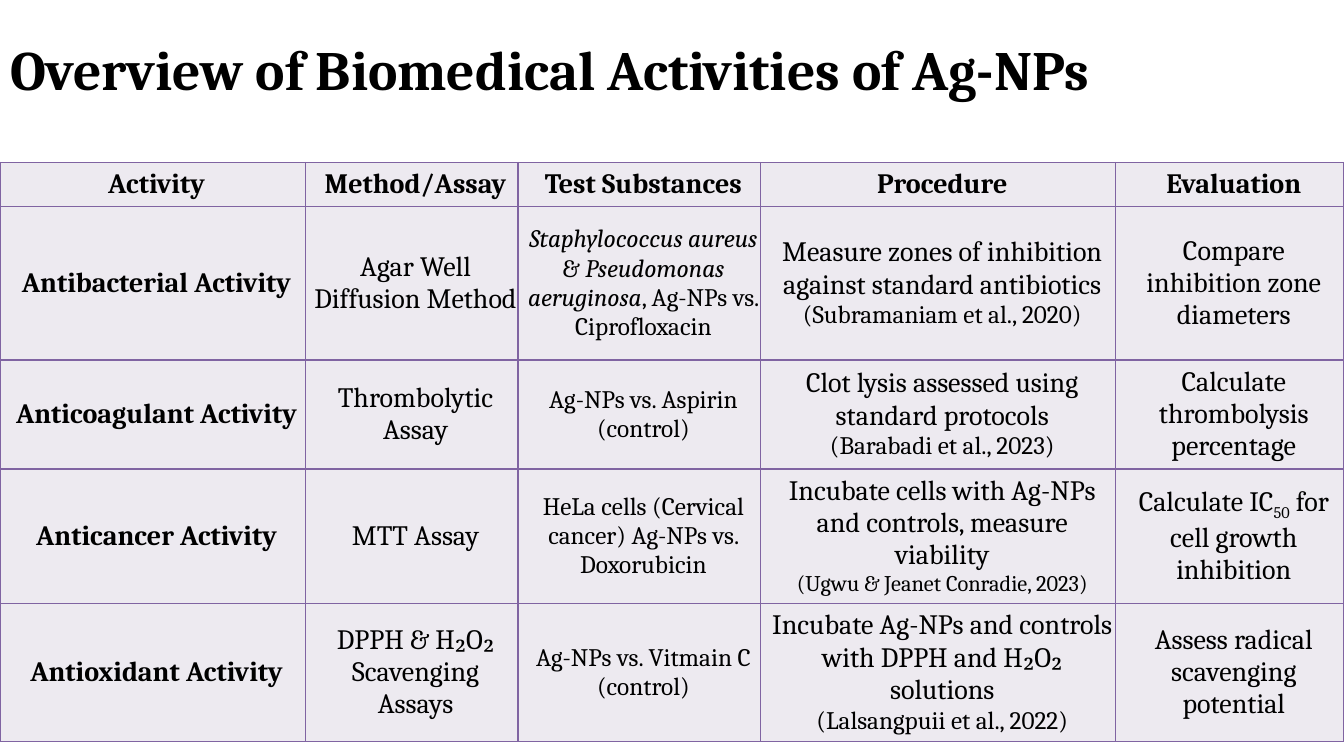
from lxml.etree import SubElement
from pptx import Presentation
from pptx.dml.color import RGBColor
from pptx.enum.text import MSO_ANCHOR, PP_ALIGN
from pptx.oxml.ns import qn
from pptx.util import Pt

TITLE = "Overview of Biomedical Activities of Ag-NPs"
HEADS = ["Activity", "Method/Assay", "Test Substances", "Procedure", "Evaluation"]
SUB = {"base": -25000}
ITAL = {"italic": True}
CITE = {"size": 18}
SMALL = {"size": 16}

# A cell is a plain string or a list of paragraphs, each a list of (text, format) runs.
ROWS = [
    ["Antibacterial Activity", "Agar Well Diffusion Method",
     [[("Staphylococcus aureus ", ITAL), ("& ", {}),
       ("Pseudomonas aeruginosa", ITAL), (", Ag-NPs vs. Ciprofloxacin", {})]],
     [[("Measure zones of inhibition against standard antibiotics", {})],
      [("(Subramaniam et al., 2020)", CITE)]],
     "Compare inhibition zone diameters"],
    ["Anticoagulant Activity", "Thrombolytic Assay", "Ag-NPs vs. Aspirin (control)",
     [[("Clot lysis assessed using standard protocols", {})],
      [("(Barabadi et al., 2023)", CITE)]],
     "Calculate thrombolysis percentage"],
    ["Anticancer Activity", "MTT Assay",
     "HeLa cells (Cervical cancer) Ag-NPs vs. Doxorubicin",
     [[("Incubate cells with Ag-NPs and controls, measure viability", {})],
      [("(Ugwu & Jeanet Conradie, 2023)", SMALL)]],
     [[("Calculate IC", {}), ("50", SUB), (" for cell growth inhibition", {})]]],
    ["Antioxidant Activity", "DPPH & H₂O₂ Scavenging Assays",
     "Ag-NPs vs. Vitmain C (control)",
     [[("Incubate Ag-NPs and controls with DPPH and H₂O₂ solutions", {})],
      [("(Lalsangpuii et al., 2022)", CITE)]],
     "Assess radical scavenging potential"],
]

COLORS = {"text": "000000", "fill": "EDEAF0", "line": "8064A2"}
FONT = "Cambria"
WIDE, HIGH = 960, 540
WIDTHS = [218, 152, 173.5, 253.5, 163]
HEIGHTS = [31, 109.5, 76, 94.5, 96.5]
TOP = 116


def write(para, text, size=20, bold=False, italic=False, base=0):
    run = para.add_run()
    run.text = text
    font = run.font
    font.name, font.size = FONT, Pt(size)
    font.bold, font.italic = bold, italic
    font.color.rgb = RGBColor.from_string(COLORS["text"])
    if base:
        run._r.get_or_add_rPr().set("baseline", str(base))


def border(cell):
    props = cell._tc.get_or_add_tcPr()
    for spot, side in enumerate(("a:lnL", "a:lnR", "a:lnT", "a:lnB")):
        line = props.makeelement(qn(side), {"w": str(Pt(1))})
        props.insert(spot, line)
        paint = SubElement(line, qn("a:solidFill"))
        SubElement(paint, qn("a:srgbClr"), val=COLORS["line"])


def fill_cell(cell, body, **style):
    cell.vertical_anchor = MSO_ANCHOR.MIDDLE
    cell.margin_left, cell.margin_right = Pt(5.76), Pt(0)
    cell.margin_top = cell.margin_bottom = Pt(4.32)
    cell.fill.solid()
    cell.fill.fore_color.rgb = RGBColor.from_string(COLORS["fill"])
    border(cell)
    paras = [[(body, {})]] if isinstance(body, str) else body
    frame = cell.text_frame
    for num, runs in enumerate(paras):
        para = frame.add_paragraph() if num else frame.paragraphs[0]
        para.alignment = PP_ALIGN.CENTER
        for text, extra in runs:
            write(para, text, **{**style, **extra})


def add_title(slide):
    title = slide.shapes.title
    title.left, title.top, title.width, title.height = Pt(0), Pt(26), Pt(864), Pt(90)
    frame = title.text_frame
    frame.word_wrap = True
    frame.vertical_anchor = MSO_ANCHOR.MIDDLE
    frame.margin_bottom = Pt(48)
    para = frame.paragraphs[0]
    para.alignment = PP_ALIGN.LEFT
    write(para, TITLE, size=39.6, bold=True)


def add_grid(slide):
    data = [HEADS] + ROWS
    grid = slide.shapes.add_table(len(data), len(HEADS), Pt(0), Pt(TOP),
                                  Pt(WIDE), Pt(sum(HEIGHTS))).table
    grid.horz_banding = False
    for col, width in zip(grid.columns, WIDTHS):
        col.width = Pt(width)
    for row, height in zip(grid.rows, HEIGHTS):
        row.height = Pt(height)
    for r, line in enumerate(data):
        for c, body in enumerate(line):
            size = 18 if r and HEADS[c] == "Test Substances" else 20
            fill_cell(grid.cell(r, c), body, size=size, bold=r == 0 or c == 0)


def main():
    deck = Presentation()
    deck.slide_width, deck.slide_height = Pt(WIDE), Pt(HIGH)
    slide = deck.slides.add_slide(deck.slide_layouts[5])
    add_title(slide)
    add_grid(slide)
    deck.save("out.pptx")


if __name__ == "__main__":
    main()
